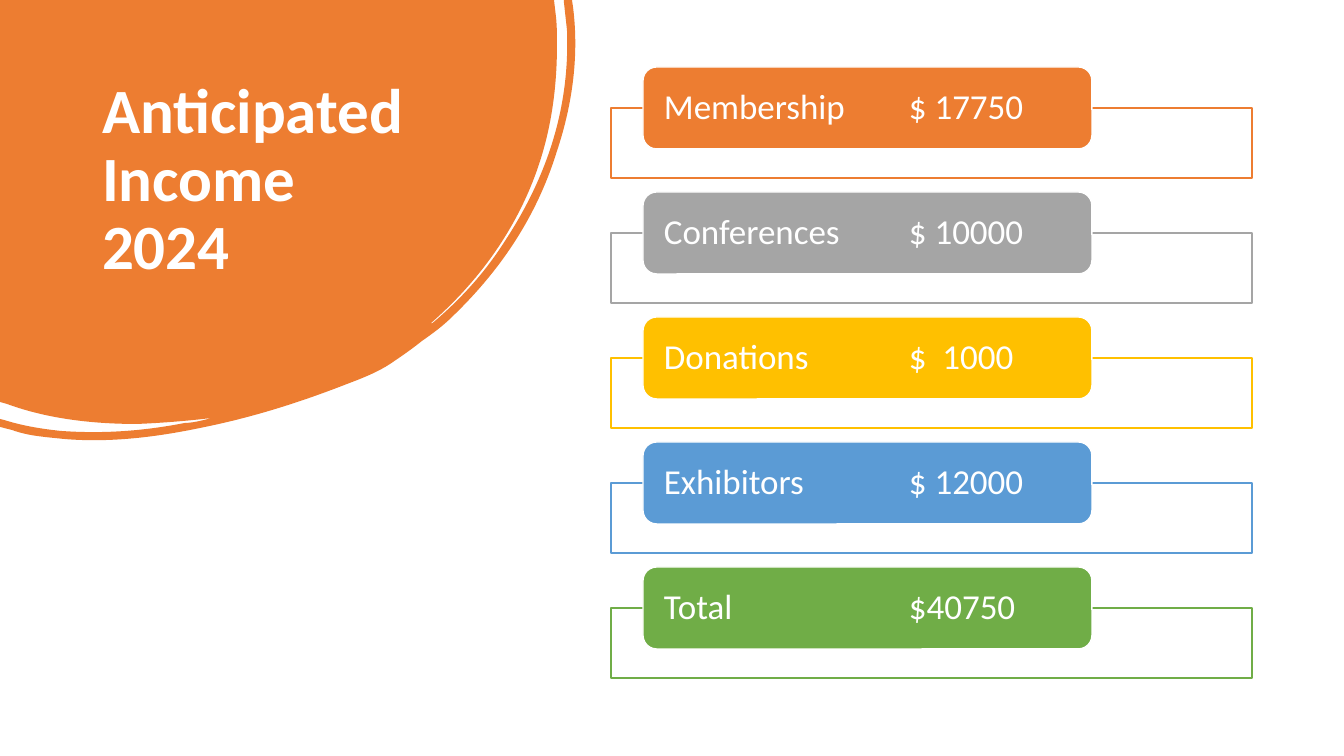
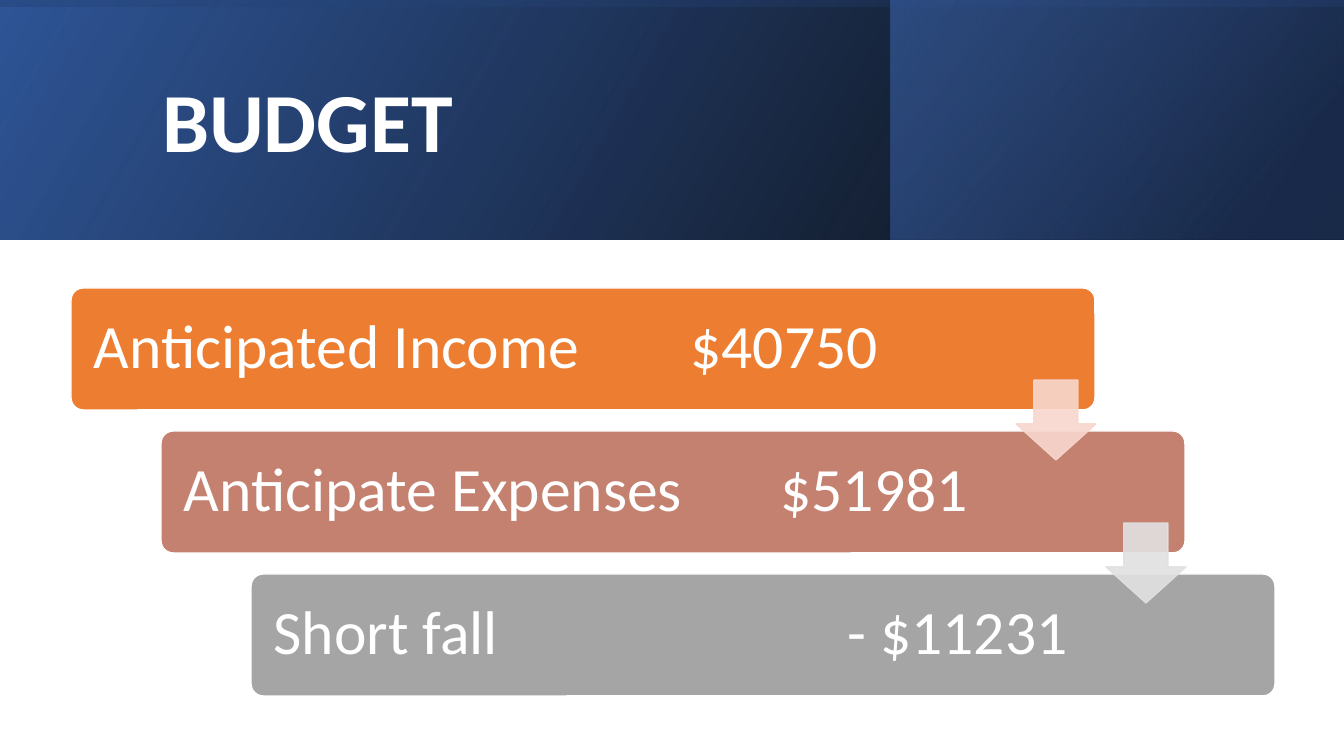
"""Build two budget slides: anticipated income and the resulting shortfall."""
from dataclasses import dataclass
from lxml.etree import SubElement as Sub
from pptx import Presentation
from pptx.dml.color import RGBColor as RGB
from pptx.enum.shapes import MSO_SHAPE as Kind
from pptx.enum.text import MSO_ANCHOR as Anchor, MSO_AUTO_SIZE as Fit, PP_ALIGN as Align
from pptx.oxml.ns import qn
from pptx.util import Emu, Pt


@dataclass(frozen=True)
class Theme:
    font: str = "Calibri"
    white: str = "FFFFFF"
    orange: str = "ED7D31"
    gray: str = "A5A5A5"
    gold: str = "FFC000"
    blue: str = "5B9BD5"
    green: str = "70AD47"
    rose: str = "C48170"
    peach: str = "F8D7CE"
    mist: str = "E1E1E1"
    black: str = "000000"
    navy: str = "203864"
    deep: str = "2F5597"
    azure: str = "4472C4"
    head: int = 45
    banner: int = 60
    item: int = 25
    total: int = 44
    rule: int = 1
    leading: float = 0.9


T = Theme()
SCALE = 914400 / 100.8
SIZE = (1344, 756)

INCOME = [
    ("Membership", "$ 17750", T.orange),
    ("Conferences", "$ 10000", T.gray),
    ("Donations", "$  1000", T.gold),
    ("Exhibitors", "$ 12000", T.blue),
    ("Total", "$40750", T.green),
]
BUDGET = [
    ("Anticipated Income", "$40750", T.orange, 597),
    ("Anticipate Expenses", "$51981", T.rose, 597),
    ("Short fall", "- $11231", T.gray, 574),
]
ARROWS = [T.peach, T.mist]
BANDS = [
    ((0, 0, 1344, 240), 150, [(0, T.black, 96), (100, T.deep, 100)]),
    ((891, 0, 453, 240), 140, [(19, T.navy, 68), (100, T.azure, 48)]),
    ((0, 0, 1344, 240), 260, [(23, T.deep, 16), (99, T.black, 45)]),
]
BLOB = [
    (0, 0), (554, 0), (556, 17),
    (557, 26, 557, 36, 557, 45), (557, 102, 547, 155, 522, 206),
    (500, 251, 469, 290, 430, 324), (432, 324, 434, 322, 435, 321),
    (463, 297, 486, 271, 505, 241), (547, 177, 570, 108, 567, 30),
    (566, 21, 565, 12, 564, 3), (564, 0), (572, 0), (573, 7),
    (579, 54, 573, 103, 557, 151), (537, 216, 501, 270, 452, 317),
    (443, 326, 432, 334, 422, 341), (412, 349, 402, 356, 390, 364),
    (378, 372, 363, 378, 347, 384), (301, 402, 254, 417, 205, 427),
    (158, 437, 111, 443, 64, 439), (45, 437, 28, 436, 12, 430),
    (0, 427), (0, 419), (4, 420),
    (23, 426, 42, 429, 61, 431), (104, 434, 144, 431, 185, 423),
    (190, 423, 195, 422, 200, 421), (204, 420, 208, 419, 212, 418),
    (187, 421, 162, 423, 137, 424), (93, 424, 48, 419, 7, 404), (0, 402),
]


def px(num):
    return Emu(round(num * SCALE))


def hue(code):
    return RGB.from_string(code)


def paint(shape, fill=None, line=None):
    shape.shadow.inherit = False
    if fill:
        shape.fill.solid()
        shape.fill.fore_color.rgb = hue(fill)
    if line:
        shape.line.color.rgb = hue(line)
        shape.line.width = Pt(T.rule)
    else:
        shape.line.fill.background()


def draw(slide, kind, box, fill=None, line=None, adj=()):
    shape = slide.shapes.add_shape(kind, *map(px, box))
    paint(shape, fill, line)
    for i, val in enumerate(adj):
        shape.adjustments[i] = val
    return shape


def fade(shape, *parts):
    for clr, part in zip(shape.element.iter(qn("a:srgbClr")), parts):
        Sub(clr, qn("a:alpha")).set("val", str(part * 1000))


def write(para, text, size, bold=False):
    run = para.add_run()
    run.text = text
    font = run.font
    font.name, font.size, font.bold = T.font, Pt(size), bold
    font.color.rgb = hue(T.white)


def title(slide, lines, box, size, anchor):
    shape = slide.shapes.title
    shape.left, shape.top, shape.width, shape.height = map(px, box)
    frame = shape.text_frame
    frame.word_wrap, frame.auto_size = True, Fit.NONE
    frame.vertical_anchor = anchor
    para = frame.paragraphs[0]
    para.alignment, para.line_spacing = Align.LEFT, T.leading
    for i, line in enumerate(lines):
        if i:
            para.add_line_break()
        write(para, line, size, True)
    slide.shapes.element.append(shape.element)


def label(shape, name, cost, size, inset, tab):
    frame = shape.text_frame
    frame.word_wrap = True
    frame.vertical_anchor = Anchor.MIDDLE
    frame.margin_left = frame.margin_right = px(inset)
    frame.margin_top = frame.margin_bottom = 0
    para = frame.paragraphs[0]
    para.alignment, para.line_spacing = Align.LEFT, T.leading
    stops = Sub(para._p.get_or_add_pPr(), qn("a:tabLst"))
    stop = Sub(stops, qn("a:tab"))
    stop.set("pos", str(px(tab)))
    stop.set("algn", "l")
    write(para, f"{name}\t{cost}", size)


def outline(slide, segs):
    ends = [tuple(map(px, seg[-2:])) for seg in segs]
    pen = slide.shapes.build_freeform(*ends[0])
    pen.add_line_segments(ends[1:], close=True)
    shape = pen.convert_to_shape()
    for node, seg in zip(list(shape.element.iter(qn("a:lnTo"))), segs[1:]):
        if len(seg) == 6:
            node.tag = qn("a:cubicBezTo")
            for i in (0, 1):
                dot = node.makeelement(qn("a:pt"))
                dot.set("x", str(px(seg[2 * i])))
                dot.set("y", str(px(seg[2 * i + 1])))
                node.insert(i, dot)
    return shape


def income(slide):
    paint(outline(slide, BLOB), T.orange)
    title(slide, ["Anticipated Income", "2024"], (92, 74, 355, 224), T.head, Anchor.TOP)
    for i, (name, cost, tint) in enumerate(INCOME):
        y = 67 + 125 * i
        frame = draw(slide, Kind.RECTANGLE, (611, y + 41, 641, 70), T.white, tint)
        fade(frame, 90)
        bar = draw(slide, Kind.ROUNDED_RECTANGLE, (643, y, 449, 82), tint, T.white)
        label(bar, name, cost, T.item, 17, 245)


def budget(slide):
    for box, angle, stops in BANDS:
        band = draw(slide, Kind.RECTANGLE, box)
        band.fill.gradient()
        band.fill.gradient_angle = angle
        for stop, (pos, tint, _) in zip(band.fill.gradient_stops, stops):
            stop.position, stop.color.rgb = pos / 100, hue(tint)
        fade(band, *(part for _, _, part in stops))
    title(slide, ["BUDGET"], (152, 39, 1072, 173), T.banner, Anchor.MIDDLE)
    spots = [(71 + 90 * i, 288 + 143 * i) for i in range(len(BUDGET))]
    for (x, y), (name, cost, tint, tab) in zip(spots, BUDGET):
        box = (x, y, 1024, 122)
        bar = draw(slide, Kind.ROUNDED_RECTANGLE, box, tint, T.white, [0.1])
        label(bar, name, cost, T.total, 19, tab)
    for (x, y), tint in zip(spots, ARROWS):
        box = (x + 945, y + 92, 80, 80)
        arrow = draw(slide, Kind.DOWN_ARROW, box, tint, tint, [0.55, 0.45])
        fade(arrow, 90, 90)


def main():
    deck = Presentation()
    deck.slide_width, deck.slide_height = map(px, SIZE)
    for build in (income, budget):
        build(deck.slides.add_slide(deck.slide_layouts[5]))
    deck.save("out.pptx")


if __name__ == "__main__":
    main()
